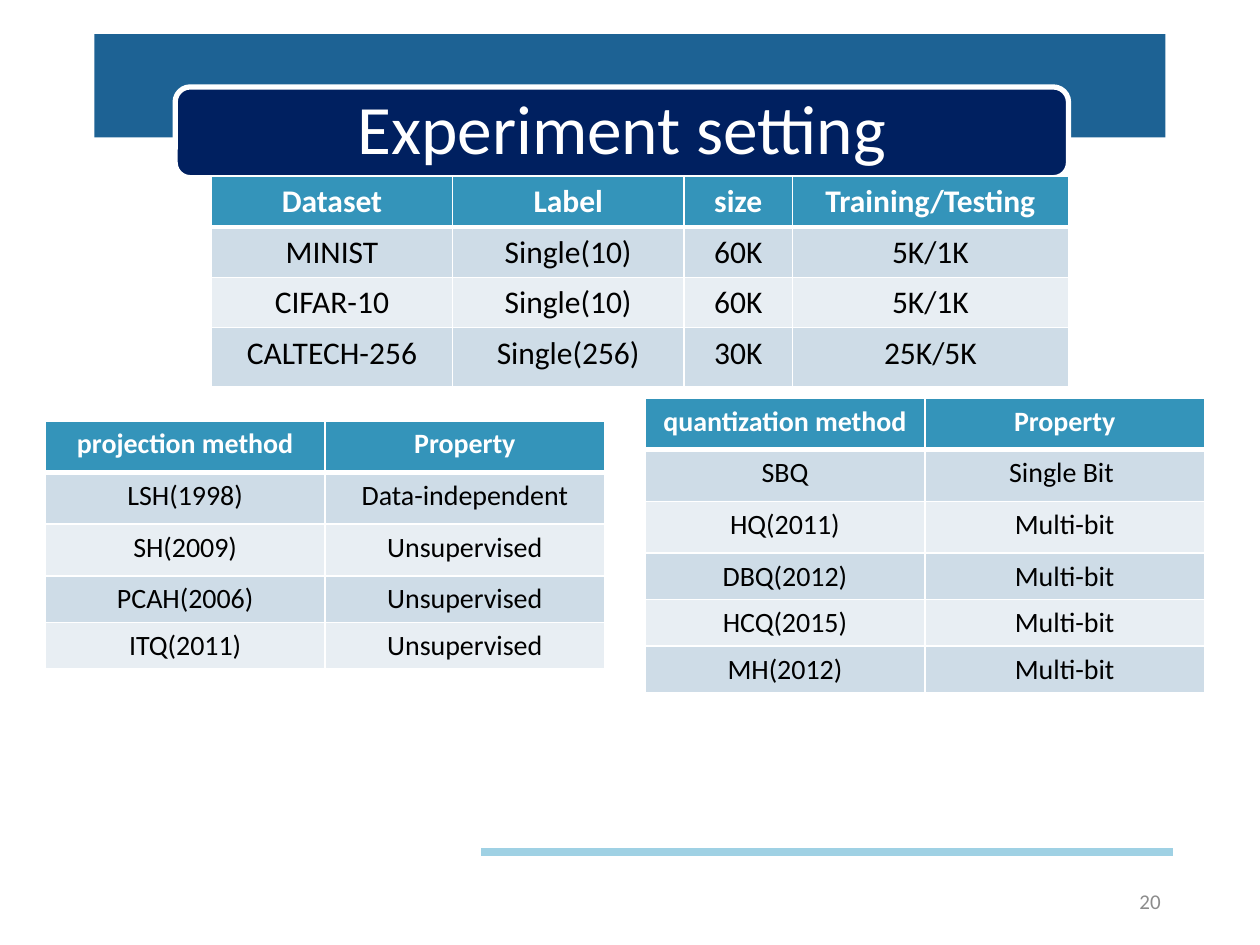
"""Build the "Experiment setting" slide with its dataset and method tables."""
from lxml import etree
from pptx import Presentation
from pptx.dml.color import RGBColor
from pptx.enum.shapes import MSO_CONNECTOR, MSO_SHAPE
from pptx.enum.text import MSO_ANCHOR, PP_ALIGN
from pptx.oxml import parse_xml
from pptx.oxml.ns import nsdecls, qn
from pptx.util import Inches, Pt

RECTANGLE, ROUNDED = MSO_SHAPE.RECTANGLE, MSO_SHAPE.ROUNDED_RECTANGLE
STRAIGHT = MSO_CONNECTOR.STRAIGHT
MIDDLE = MSO_ANCHOR.MIDDLE
CENTER, RIGHT = PP_ALIGN.CENTER, PP_ALIGN.RIGHT
TITLE_ONLY = 5

THEME = {
    "font": "Calibri",
    "white": "FFFFFF", "black": "000000", "grey": "8C8C8C",
    "banner": "1D6294", "badge": "002060", "rule": "9FD1E4",
    "header": "3494BA", "bands": ("CEDCE7", "E8EEF3"),
    "title_size": 39.6, "number_size": 12,
}

TITLE = "Experiment setting"
PAGE_NUMBER = "20"
BADGE_BOX = (1.39, 0.69, 7.09, 0.72)
TABLES = [
    {
        "at": (1.68, 1.4), "size": 18,
        "columns": (1.91, 1.84, 0.86, 2.19),
        "heights": (0.4, 0.4, 0.4, 0.47),
        "rows": [
            ("Dataset", "Label", "size", "Training/Testing"),
            ("MINIST", "Single(10)", "60K", "5K/1K"),
            ("CIFAR-10", "Single(10)", "60K", "5K/1K"),
            ("CALTECH-256", "Single(256)", "30K", "25K/5K"),
        ],
    },
    {
        "at": (0.36, 3.34), "size": 16,
        "columns": (2.22, 2.22),
        "heights": (0.41, 0.41, 0.41, 0.37, 0.37),
        "rows": [
            ("projection method", "Property"),
            ("LSH(1998)", "Data-independent"),
            ("SH(2009)", "Unsupervised"),
            ("PCAH(2006)", "Unsupervised"),
            ("ITQ(2011)", "Unsupervised"),
        ],
    },
    {
        "at": (5.12, 3.16), "size": 16,
        "columns": (2.22, 2.22),
        "heights": (0.41, 0.41, 0.41, 0.37, 0.37, 0.37),
        "rows": [
            ("quantization method", "Property"),
            ("SBQ", "Single Bit "),
            ("HQ(2011)", "Multi-bit"),
            ("DBQ(2012)", "Multi-bit"),
            ("HCQ(2015)", "Multi-bit"),
            ("MH(2012)", "Multi-bit"),
        ],
    },
]


def color(name):
    return RGBColor.from_string(THEME.get(name, name))


def inches(values):
    return [Inches(value) for value in values]


def write(frame, text, size, ink, align, bold=False):
    frame.text = text
    para = frame.paragraphs[0]
    para.alignment = align
    para.font.name = THEME["font"]
    para.font.size = Pt(size)
    para.font.bold = bold
    para.font.color.rgb = color(ink)
    return para


def add_block(page, preset, box, fill):
    block = page.shapes.add_shape(preset, *inches(box))
    block.shadow.inherit = False
    block.fill.solid()
    block.fill.fore_color.rgb = color(fill)
    block.line.fill.background()
    return block


def add_rule(page):
    rule = page.shapes.add_connector(STRAIGHT, *inches((3.82, 6.76, 9.31, 6.76)))
    rule.line.color.rgb = color("rule")
    rule.line.width = Pt(4.5)
    etree.SubElement(rule.element.spPr, qn("a:effectLst"))


def add_title(page, badge):
    title = page.shapes.title
    title.left, title.top, title.width, title.height = inches(BADGE_BOX)
    title.text_frame.vertical_anchor = MIDDLE
    para = write(title.text_frame, TITLE, THEME["title_size"], "white", CENTER)
    para.line_spacing = 0.9
    badge.element.addnext(title.element)


def add_page_number(page):
    box = page.shapes.add_textbox(*inches((7.06, 6.95, 2.25, 0.4)))
    box.text_frame.word_wrap = True
    box.text_frame.vertical_anchor = MIDDLE
    write(box.text_frame, PAGE_NUMBER, THEME["number_size"], "grey", RIGHT)


def set_borders(cell, widths):
    properties = cell._tc.get_or_add_tcPr()
    for side, width in widths.items():
        properties.append(parse_xml(
            f'<a:ln{side} {nsdecls("a")} w="{Pt(width)}"><a:solidFill>'
            f'<a:srgbClr val="{THEME["white"]}"/></a:solidFill></a:ln{side}>'))


def add_table(page, data):
    rows, columns, heights = data["rows"], data["columns"], data["heights"]
    box = (*data["at"], sum(columns), sum(heights))
    table = page.shapes.add_table(len(rows), len(columns), *inches(box)).table
    for column, width in zip(table.columns, columns):
        column.width = Inches(width)
    for index, (row, height, texts) in enumerate(zip(table.rows, heights, rows)):
        row.height = Inches(height)
        is_header = index == 0
        fill = "header" if is_header else THEME["bands"][(index - 1) % 2]
        ink = "white" if is_header else "black"
        borders = {"L": 1, "R": 1, "T": 3 if index == 1 else 1,
                   "B": 3 if is_header else 1}
        for cell, text in zip(row.cells, texts):
            set_borders(cell, borders)
            cell.fill.solid()
            cell.fill.fore_color.rgb = color(fill)
            write(cell.text_frame, text, data["size"], ink, CENTER, is_header)


def main():
    deck = Presentation()
    deck.slide_width, deck.slide_height = inches((10, 7.5))
    page = deck.slides.add_slide(deck.slide_layouts[TITLE_ONLY])
    add_block(page, RECTANGLE, (0.75, 0.27, 8.5, 0.82), "banner")
    badge = add_block(page, ROUNDED, BADGE_BOX, "badge")
    badge.line.color.rgb = color("white")
    badge.line.width = Pt(3)
    add_title(page, badge)
    add_rule(page)
    add_page_number(page)
    for data in TABLES:
        add_table(page, data)
    deck.save("out.pptx")


if __name__ == "__main__":
    main()
